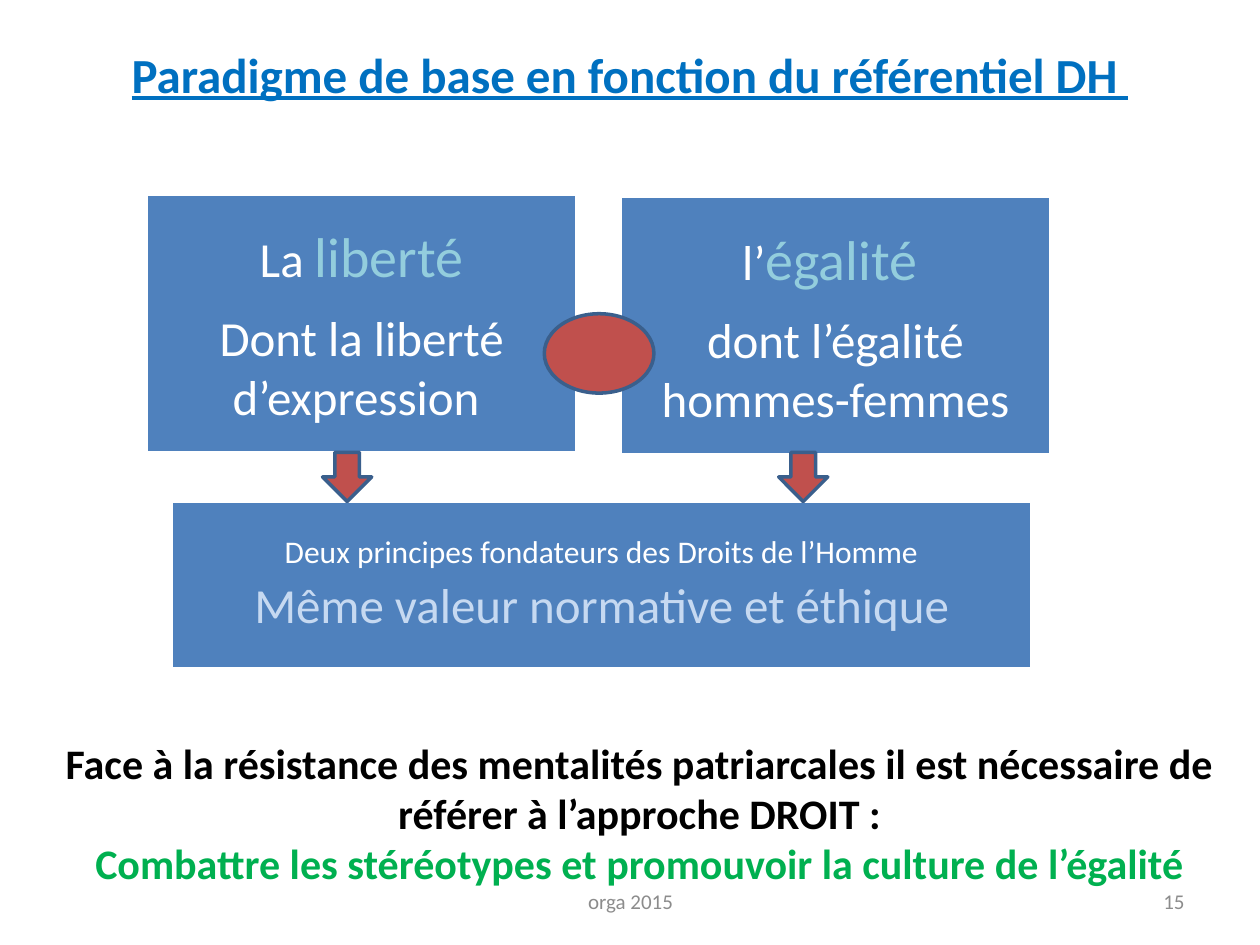
from pptx import Presentation
from pptx.dml.color import RGBColor
from pptx.enum.shapes import MSO_SHAPE
from pptx.enum.text import MSO_ANCHOR, PP_ALIGN
from pptx.util import Inches, Pt

WHITE = RGBColor(0xFF, 0xFF, 0xFF)
BLACK = RGBColor(0x00, 0x00, 0x00)
GREY = RGBColor(0x8C, 0x8C, 0x8C)
TITLE_BLUE = RGBColor(0x00, 0x70, 0xC0)
BOX_BLUE = RGBColor(0x4F, 0x81, 0xBD)
OUTLINE_BLUE = RGBColor(0x3A, 0x5F, 0x8C)
AQUA = RGBColor(0x93, 0xCD, 0xDD)
PALE_BLUE = RGBColor(0xC6, 0xD9, 0xF1)
RED = RGBColor(0xC0, 0x50, 0x4D)
GREEN = RGBColor(0x00, 0xB0, 0x50)

presentation = Presentation()
presentation.slide_width = Inches(10)
presentation.slide_height = Inches(7.5)
slide = presentation.slides.add_slide(presentation.slide_layouts[5])


def write_text(shape, paragraphs, inset=None, anchor=MSO_ANCHOR.TOP, bold=False, **formats):
    """Fill a shape with paragraphs of (text, size, colour) runs."""
    frame = shape.text_frame
    frame.word_wrap = True
    frame.vertical_anchor = anchor
    if inset is not None:
        for side in ("left", "top", "right", "bottom"):
            setattr(frame, f"margin_{side}", Inches(inset))
    for index, runs in enumerate(paragraphs):
        paragraph = frame.paragraphs[0] if index == 0 else frame.add_paragraph()
        for name, value in ({"alignment": PP_ALIGN.CENTER} | formats).items():
            setattr(paragraph, name, value)
        if "line_spacing" in formats or inset is not None:
            # The gap below a paragraph is 35 % of its text size
            paragraph.space_after = Pt(round(0.35 * runs[-1][1]))
        for text, size, colour in runs:
            run = paragraph.add_run()
            run.text = text
            values = {"name": "Calibri", "size": Pt(size), "bold": bold}
            for name, value in values.items():
                setattr(run.font, name, value)
            run.font.color.rgb = colour


def add_block(kind, place, fill, outline):
    """Add a filled and outlined preset shape without shadow."""
    shape = slide.shapes.add_shape(kind, *map(Inches, place))
    shape.shadow.inherit = False
    shape.fill.solid()
    shape.fill.fore_color.rgb = fill
    shape.line.color.rgb = outline
    shape.line.width = Pt(2)
    return shape


# Title
title = slide.shapes.title
title_place = {"left": 0.5, "top": 0.3, "width": 9, "height": 1.01}
for name, value in title_place.items():
    setattr(title, name, Inches(value))
write_text(title, [[("Paradigme de base en fonction du référentiel DH ", 28, TITLE_BLUE)]], bold=True)
title.text_frame.paragraphs[0].runs[0].font.underline = True

# Two principles and their shared foundation
boxes = [
    ((1.16, 1.54, 3.42, 2.05), 0.12, {}, [
        [("La ", 28, WHITE), ("liberté", 32, AQUA)],
        [("Dont la liberté d’expression ", 28, WHITE)],
    ]),
    ((4.92, 1.56, 3.42, 2.05), 0.12, {}, [
        [("l’", 28, WHITE), ("égalité", 32, AQUA), (" ", 28, WHITE)],
        [("dont l’égalité hommes-femmes", 28, WHITE)],
    ]),
    ((1.36, 3.98, 6.83, 1.33), 0.07, {"line_spacing": 0.9}, [
        [("Deux principes fondateurs des Droits de l’Homme", 18, WHITE)],
        [("Même valeur normative et éthique", 28, PALE_BLUE)],
    ]),
]
for place, inset, formats, paragraphs in boxes:
    box = add_block(MSO_SHAPE.RECTANGLE, place, BOX_BLUE, WHITE)
    write_text(box, paragraphs, inset, MSO_ANCHOR.MIDDLE, **formats)

# Link between the principles, and arrows down to the foundation
add_block(MSO_SHAPE.OVAL, (4.32, 2.49, 0.87, 0.63), RED, OUTLINE_BLUE)
for left in (2.56, 6.18):
    add_block(MSO_SHAPE.DOWN_ARROW, (left, 3.59, 0.39, 0.39), RED, OUTLINE_BLUE)

# Conclusion, footer and page number
conclusion = [
    [("Face à la résistance des mentalités patriarcales il est nécessaire de "
      "référer à l’approche DROIT :", 24, BLACK)],
    [(" ", 24, GREEN),
     ("Combattre les stéréotypes et promouvoir la culture de l’égalité ", 24, GREEN)],
]
small_print = {"anchor": MSO_ANCHOR.MIDDLE}
texts = [
    ((0.35, 5.8, 9.45, 1.31), conclusion, {"bold": True}),
    ((3.42, 6.95, 3.17, 0.4), [[("orga 2015", 12, GREY)]], small_print),
    ((7.17, 6.95, 2.33, 0.4), [[("15", 12, GREY)]],
     small_print | {"alignment": PP_ALIGN.RIGHT}),
]
for place, paragraphs, formats in texts:
    text_box = slide.shapes.add_textbox(*map(Inches, place))
    write_text(text_box, paragraphs, **formats)

presentation.save("out.pptx")
